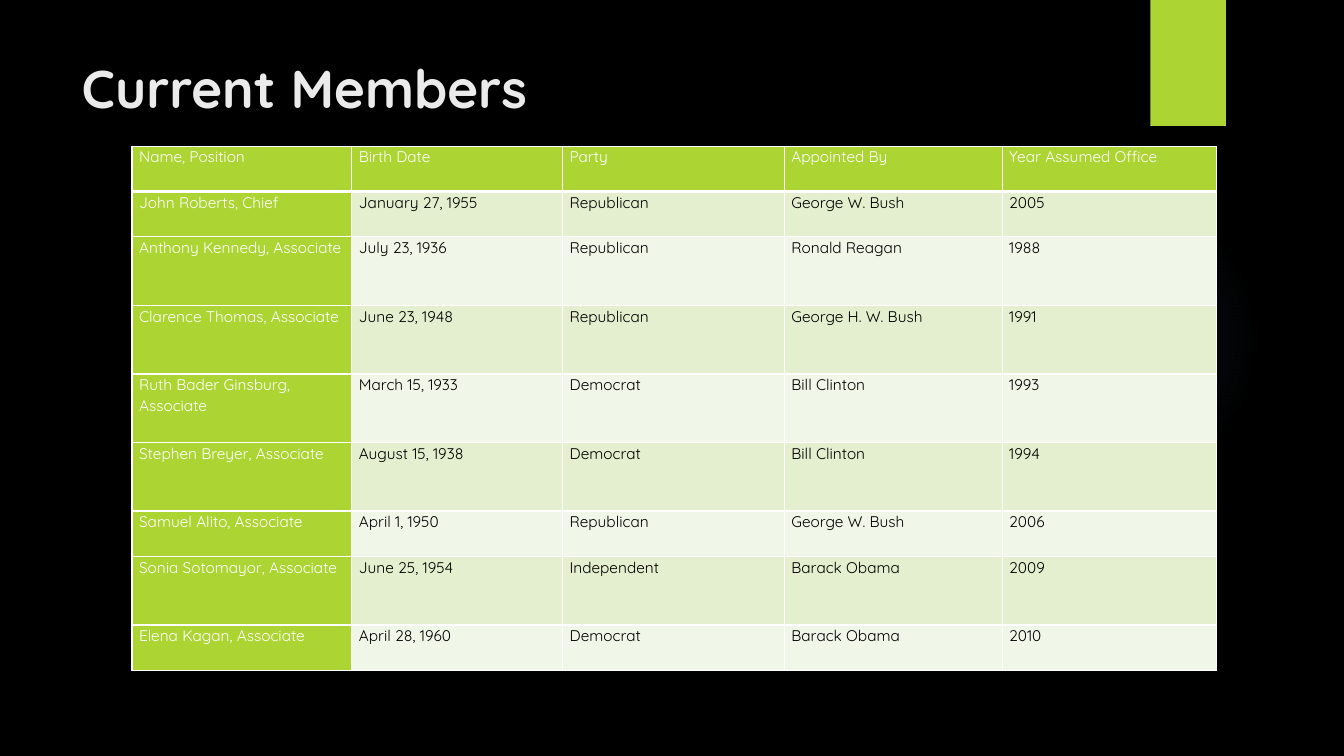
from lxml import etree
from pptx import Presentation
from pptx.dml.color import RGBColor
from pptx.enum.shapes import MSO_SHAPE
from pptx.enum.text import MSO_ANCHOR, PP_ALIGN
from pptx.oxml import parse_xml
from pptx.oxml.ns import nsdecls, qn
from pptx.util import Inches, Pt

OVAL, RECT = MSO_SHAPE.OVAL, MSO_SHAPE.RECTANGLE
TOP, LEFT = MSO_ANCHOR.TOP, PP_ALIGN.LEFT
FONT = "Quicksand"
GREEN, WHITE, BLACK = "ACD433", "FFFFFF", "000000"
BANDS = ["E3EFCE", "F1F7E8"]

MEMBERS = [
    ["Name, Position", "Birth Date", "Party", "Appointed By", "Year Assumed Office"],
    ["John Roberts, Chief", "January 27, 1955", "Republican", "George W. Bush", "2005"],
    ["Anthony Kennedy, Associate", "July 23, 1936", "Republican", "Ronald Reagan", "1988"],
    ["Clarence Thomas, Associate", "June 23, 1948", "Republican", "George H. W. Bush", "1991"],
    ["Ruth Bader Ginsburg, Associate", "March 15, 1933", "Democrat", "Bill Clinton", "1993"],
    ["Stephen Breyer, Associate", "August 15, 1938", "Democrat", "Bill Clinton", "1994"],
    ["Samuel Alito, Associate", "April 1, 1950", "Republican", "George W. Bush", "2006"],
    ["Sonia Sotomayor, Associate", "June 25, 1954", "Independent", "Barack Obama", "2009"],
    ["Elena Kagan, Associate", "April 28, 1960", "Democrat", "Barack Obama", "2010"],
]
COL_WIDTHS = [2.18, 2.09, 2.2, 2.16, 2.13]
ROW_HEIGHTS = [0.45, 0.45, 0.68, 0.68, 0.68, 0.68, 0.45, 0.68, 0.45]


def rgb(color):
    return RGBColor.from_string(color)


def write(tf, text, size, color, bold=False, spacing=1.0):
    tf.word_wrap = True
    p = tf.paragraphs[0]
    p.alignment = LEFT
    p.line_spacing = spacing
    r = p.add_run()
    r.text = text
    r.font.name, r.font.size, r.font.bold = FONT, Pt(size), bold
    r.font.color.rgb = rgb(color)


prs = Presentation()
prs.slide_width, prs.slide_height = Inches(13.33), Inches(7.5)
s = prs.slides.add_slide(prs.slide_layouts[5])
s.background.fill.solid()
s.background.fill.fore_color.rgb = rgb(BLACK)

# Faint glow behind the table
glow = s.shapes.add_shape(OVAL, Inches(9.41), Inches(1.83), Inches(3.08), Inches(3.08))
glow.shadow.inherit = False
glow.line.fill.background()
stops = "".join(
    f'<a:gs pos="{pos * 1000}"><a:srgbClr val="7AC4F0"><a:alpha val="{alpha * 1000}"/></a:srgbClr></a:gs>'
    for pos, alpha in [(0, 7), (36, 6), (69, 0), (100, 0)])
glow.element.spPr.find(qn("a:prstGeom")).addnext(parse_xml(
    f'<a:gradFill {nsdecls("a")}><a:gsLst>{stops}</a:gsLst><a:path path="circle">'
    '<a:fillToRect l="50000" t="50000" r="50000" b="50000"/></a:path></a:gradFill>'))

tab = s.shapes.add_shape(RECT, Inches(11.41), 0, Inches(0.75), Inches(1.25))
tab.shadow.inherit = False
tab.fill.solid()
tab.fill.fore_color.rgb = rgb(GREEN)
tab.line.fill.background()

title = s.shapes.title
title.left, title.top = Inches(0.71), Inches(0.5)
title.width, title.height = Inches(10.29), Inches(1.53)
title.text_frame.vertical_anchor = TOP
write(title.text_frame, "Current Members", 38, "EBEBEB", bold=True)

table = s.shapes.add_table(len(MEMBERS), len(COL_WIDTHS), Inches(1.31), Inches(1.45),
                           Inches(sum(COL_WIDTHS)), Inches(sum(ROW_HEIGHTS))).table
for col, width in zip(table.columns, COL_WIDTHS):
    col.width = Inches(width)
for row, height in zip(table.rows, ROW_HEIGHTS):
    row.height = Inches(height)

for i, member in enumerate(MEMBERS):
    for j, text in enumerate(member):
        cell = table.cell(i, j)
        cell.margin_left = cell.margin_right = Inches(0.07)
        cell.margin_top = cell.margin_bottom = 0
        cell.vertical_anchor = TOP
        heading = i == 0 or j == 0
        write(cell.text_frame, text, 11, WHITE if heading else BLACK, spacing=1.07)
        # The rule under the header row is heavier than the grid
        widths = {"lnL": 1, "lnR": 1, "lnT": 3 if i == 1 else 1, "lnB": 3 if i == 0 else 1}
        for side, width in widths.items():
            ln = etree.SubElement(cell._tc.get_or_add_tcPr(), qn(f"a:{side}"), w=str(Pt(width)))
            fill = etree.SubElement(ln, qn("a:solidFill"))
            etree.SubElement(fill, qn("a:srgbClr"), val=WHITE)
        cell.fill.solid()
        cell.fill.fore_color.rgb = rgb(GREEN if heading else BANDS[(i - 1) % 2])

prs.save("out.pptx")
